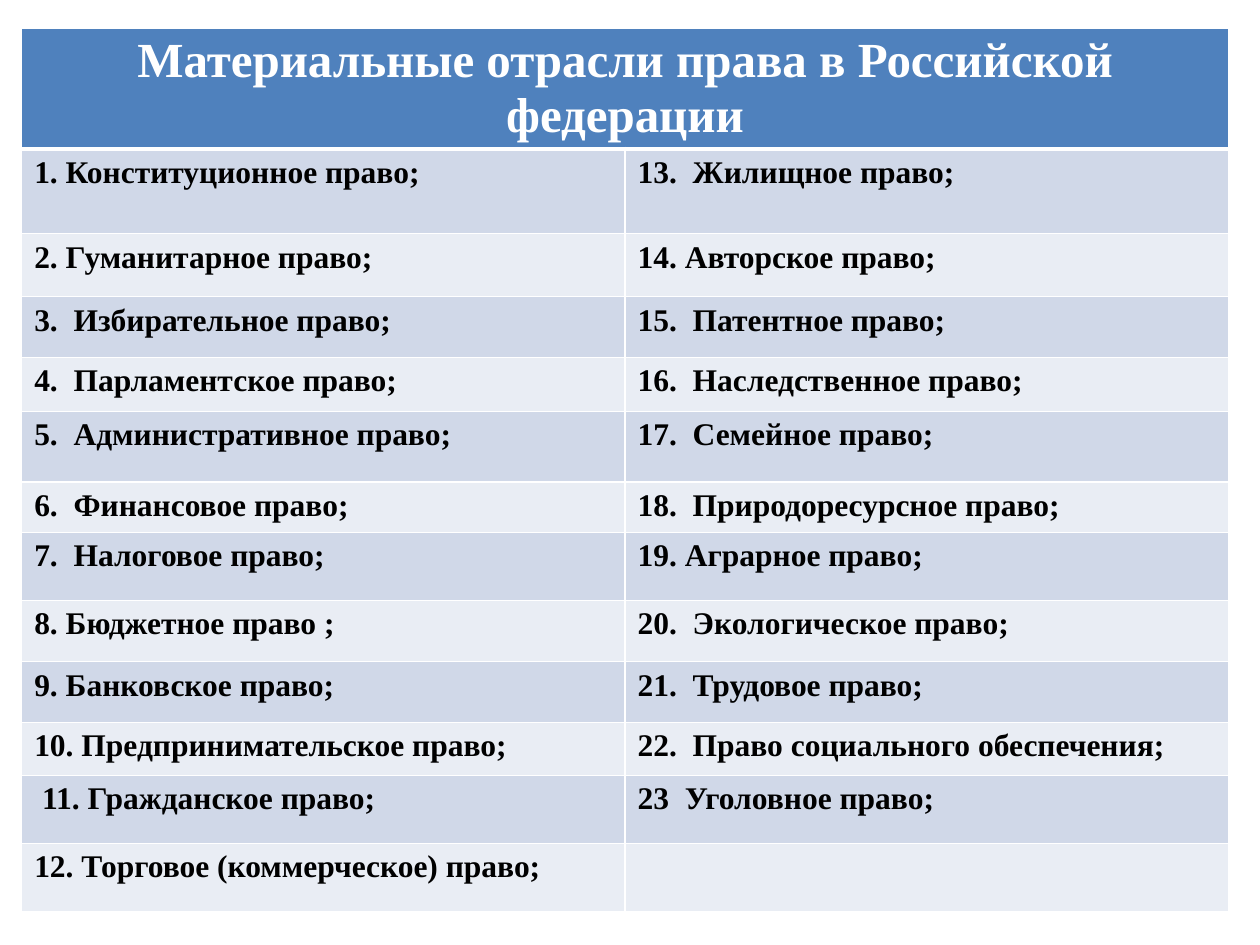
import pptx
import pptx.dml.color
import pptx.enum.text
import pptx.oxml
import pptx.oxml.ns
import pptx.util

Pt = pptx.util.Pt
RGBColor = pptx.dml.color.RGBColor

WHITE = RGBColor(0xFF, 0xFF, 0xFF)
BLACK = RGBColor(0, 0, 0)
HEADER_BLUE = RGBColor(0x4F, 0x81, 0xBD)
BANDS = (RGBColor(0xD0, 0xD8, 0xE8), RGBColor(0xE9, 0xED, 0xF4))

TITLE = "Материальные отрасли права в Российской федерации"
LAW_BRANCHES = [
    ("1. Конституционное право;", "13.  Жилищное право;"),
    ("2. Гуманитарное право;", "14. Авторское право;"),
    ("3.  Избирательное право;", "15.  Патентное право;"),
    ("4.  Парламентское право;", "16.  Наследственное право;"),
    ("5.  Административное право;", "17.  Семейное право;"),
    ("6.  Финансовое право;", "18.  Природоресурсное право;"),
    ("7.  Налоговое право;", "19. Аграрное право;"),
    ("8. Бюджетное право ;", "20.  Экологическое право;"),
    ("9. Банковское право;", "21.  Трудовое право;"),
    ("10. Предпринимательское право;", "22.  Право социального обеспечения;"),
    (" 11. Гражданское право;", "23  Уголовное право;"),
    ("12. Торговое (коммерческое) право;", ""),
]
ROW_HEIGHTS = [40.3, 48.4, 36, 34.6, 31, 40.4, 28.7, 38.9, 35, 34.8, 30.3, 38.9, 38.9]


class SlideBuilder:
    font_name = "Times New Roman"
    border_color = WHITE

    def __init__(self, slide):
        self.slide = slide

    def add_table(self, left, top, width, height, row_heights, column_count):
        shape = self.slide.shapes.add_table(
            len(row_heights), column_count, Pt(left), Pt(top), Pt(width), Pt(height)
        )
        table = shape.table
        for row, row_height in zip(table.rows, row_heights):
            row.height = Pt(row_height)
        return table

    def style_cell(self, cell, fill_color, top=1, bottom=1):
        properties = cell._tc.get_or_add_tcPr()
        for side, width in (("L", 1), ("R", 1), ("T", top), ("B", bottom)):
            properties.append(pptx.oxml.parse_xml(
                f'<a:ln{side} {pptx.oxml.ns.nsdecls("a")} w="{Pt(width)}">'
                f'<a:solidFill><a:srgbClr val="{self.border_color}"/></a:solidFill>'
                f'</a:ln{side}>'
            ))
        cell.fill.solid()
        cell.fill.fore_color.rgb = fill_color

    def write_cell(self, cell, text, size, color, alignment=None):
        paragraph = cell.text_frame.paragraphs[0]
        paragraph.alignment = alignment
        paragraph.font.size = Pt(size)
        if text:
            run = paragraph.add_run()
            run.text = text
            run.font.name = self.font_name
            run.font.size = Pt(size)
            run.font.bold = True
            run.font.color.rgb = color


def main():
    presentation = pptx.Presentation()
    presentation.slide_width = Pt(720)
    presentation.slide_height = Pt(540)
    builder = SlideBuilder(presentation.slides.add_slide(presentation.slide_layouts[6]))

    table = builder.add_table(12.4, 16, 689.6, 512.6, ROW_HEIGHTS, 2)
    header = table.cell(0, 0)
    header.merge(table.cell(0, 1))
    for cell in table.rows[0].cells:
        builder.style_cell(cell, HEADER_BLUE, bottom=3)
    builder.write_cell(header, TITLE, 28, WHITE, pptx.enum.text.PP_ALIGN.CENTER)

    for index, branches in enumerate(LAW_BRANCHES):
        for column, branch in enumerate(branches):
            cell = table.cell(index + 1, column)
            builder.style_cell(cell, BANDS[index % 2], top=3 if index == 0 else 1)
            builder.write_cell(cell, branch, 18, BLACK)

    presentation.save("out.pptx")


if __name__ == "__main__":
    main()
